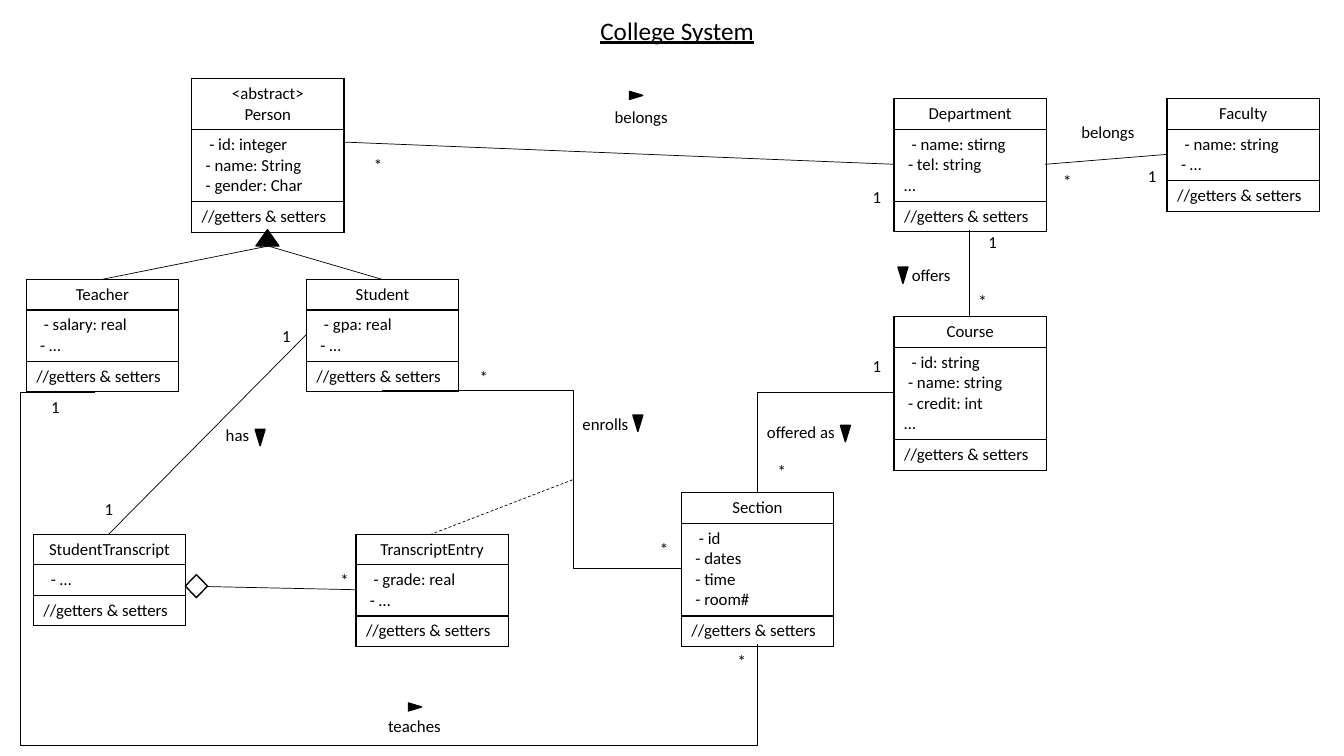
from lxml import etree
from pptx import Presentation
from pptx.dml.color import RGBColor
from pptx.enum.dml import MSO_LINE
from pptx.enum.shapes import MSO_CONNECTOR, MSO_SHAPE
from pptx.enum.text import MSO_AUTO_SIZE, PP_ALIGN
from pptx.oxml import parse_xml
from pptx.oxml.ns import nsdecls, qn
from pptx.util import Cm, Pt

STRAIGHT, ELBOW = MSO_CONNECTOR.STRAIGHT, MSO_CONNECTOR.ELBOW
TRIANGLE, DIAMOND = MSO_SHAPE.ISOSCELES_TRIANGLE, MSO_SHAPE.DIAMOND
CENTER, LEFT = PP_ALIGN.CENTER, PP_ALIGN.LEFT
DASH = MSO_LINE.DASH
FIT_SHAPE = MSO_AUTO_SIZE.SHAPE_TO_FIT_TEXT

BLACK, WHITE = "000000", "FFFFFF"
BODY = {"name": "Calibri", "size": Pt(12)}
TITLE = {"name": "Calibri", "size": Pt(18), "underline": True}
CLASS_WIDTH = 3.84
LINE_HEIGHT, ROW_PADDING = 0.52, 0.25
FIRST_INDENT, NEXT_INDENT = 0.19, 0.1
DOWN, RIGHT = (180, 0.25, 0.41), (90, 0.2, 0.33)

# Class name lines, left, top, attributes
CLASSES = [
    (["Student"], 7.72, 7.04, ["- gpa: real", "- …"]),
    (["Teacher"], 0.66, 7.04, ["- salary: real", "- …"]),
    (["<abstract>", "Person"], 4.83, 1.98,
     ["- id: integer", "- name: String", "- gender: Char"]),
    (["Faculty"], 29.41, 2.49, ["- name: string", "- …"]),
    (["Department"], 22.53, 2.49, ["- name: stirng", "- tel: string", "…"]),
    (["Course"], 22.53, 7.98,
     ["- id: string", "- name: string", "- credit: int", "…"]),
    (["Section"], 17.17, 12.42, ["- id", "- dates", "- time", "- room#"]),
    (["TranscriptEntry"], 8.97, 13.46, ["- grade: real", "- …"]),
    (["StudentTranscript"], 0.84, 13.46, ["- …"]),
]

# Start and end points
STRAIGHT_LINKS = [
    (9.63, 7.04, 6.76, 6.2), (6.76, 6.2, 2.57, 7.04),
    (29.41, 3.89, 26.34, 4.14), (8.66, 3.58, 22.53, 4.14),
    (5.21, 14.78, 8.97, 14.86), (24.43, 5.79, 24.43, 7.98),
    (7.72, 8.43, 2.74, 13.46),
]
ENTRY_LINK = (14.43, 12.09, 10.87, 13.46)

# Points, geometry, bend positions in thousandths of a percent
BENT_LINKS = [
    ((9.63, 9.83, 17.17, 14.33), "bentConnector3", [63800]),
    ((22.53, 9.88, 19.08, 12.42), "bentConnector2", []),
    ((2.39, 9.88, 19.08, 16.23), "bentConnector4", [-11200, 140100]),
]

# Text, left, top, width
LABELS = [
    ("belongs", 15.24, 2.57, 1.85), ("belongs", 27, 2.95, 1.85),
    ("enrolls", 14.43, 10.31, 1.68), ("offers", 22.73, 6.55, 1.5),
    ("offered as", 19.08, 10.49, 2.24), ("has", 5.44, 10.57, 1.12),
    ("teaches", 9.53, 17.91, 1.85),
]
POINTERS = [
    (DOWN, [(15.95, 10.46), (22.63, 6.73), (21.18, 10.72), (6.43, 10.82)]),
    (RIGHT, [(15.93, 2.24), (10.36, 17.65)]),
]
MULTIPLICITIES = {
    "1": [(21.74, 4.57), (24.66, 5.72), (21.74, 8.84), (6.86, 8.08),
          (2.39, 12.45), (1.04, 9.88), (28.68, 4.04)],
    "*": [(9.17, 3.78), (26.54, 4.19), (24.41, 7.21), (19.35, 11.48),
          (11.84, 9.12), (16.38, 13.46), (8.33, 14.22), (18.34, 16.28)],
}


def color(value):
    return RGBColor.from_string(value)


class Diagram:
    def __init__(self, slide, ink=BLACK):
        self.slide = slide
        self.ink = ink

    def add_run(self, paragraph, text, style=BODY, alignment=LEFT):
        paragraph.alignment = alignment
        run = paragraph.add_run()
        run.text = text
        for name, value in style.items():
            setattr(run.font, name, value)
        run.font.color.rgb = color(self.ink)

    def text(self, text, left, top, width, height=0.76, style=BODY):
        box = self.slide.shapes.add_textbox(Cm(left), Cm(top), Cm(width), Cm(height))
        box.text_frame.word_wrap = False
        box.text_frame.auto_size = FIT_SHAPE
        self.add_run(box.text_frame.paragraphs[0], text, style)

    def shape(self, kind, left, top, width, height, fill, rotation=0):
        shape = self.slide.shapes.add_shape(
            kind, Cm(left), Cm(top), Cm(width), Cm(height))
        shape.shadow.inherit = False
        shape.rotation = rotation
        shape.fill.solid()
        shape.fill.fore_color.rgb = color(fill)
        shape.line.color.rgb = color(self.ink)
        shape.line.width = Pt(1)

    def link(self, points, kind=STRAIGHT, dash=None):
        connector = self.slide.shapes.add_connector(kind, *map(Cm, points))
        connector.line.color.rgb = color(self.ink)
        connector.line.width = Pt(0.5)
        if dash:
            connector.line.dash_style = dash
        etree.SubElement(connector._element.spPr, qn("a:effectLst"))
        return connector

    def bent_link(self, points, geometry, bends):
        connector = self.link(points, ELBOW)
        preset = connector._element.spPr.find(qn("a:prstGeom"))
        preset.set("prst", geometry)
        guides = preset.find(qn("a:avLst"))
        for number, bend in enumerate(bends, 1):
            etree.SubElement(guides, qn("a:gd"), name=f"adj{number}",
                             fmla=f"val {bend}")

    def border(self, cell):
        properties = cell._tc.get_or_add_tcPr()
        for side in ("lnL", "lnR", "lnT", "lnB"):
            properties.append(parse_xml(
                f'<a:{side} {nsdecls("a")} w="{Pt(1)}"><a:solidFill>'
                f'<a:srgbClr val="{self.ink}"/></a:solidFill></a:{side}>'))

    def class_box(self, name, left, top, attributes):
        sections = [name, attributes, ["//getters & setters"]]
        heights = [ROW_PADDING + LINE_HEIGHT * len(lines) for lines in sections]
        table = self.slide.shapes.add_table(
            len(sections), 1, Cm(left), Cm(top), Cm(CLASS_WIDTH),
            Cm(sum(heights))).table
        table.first_row = table.horz_banding = False
        for index, lines in enumerate(sections):
            table.rows[index].height = Cm(heights[index])
            cell = table.cell(index, 0)
            self.border(cell)
            cell.fill.background()
            frame = cell.text_frame
            for number, line in enumerate(lines):
                paragraph = frame.add_paragraph() if number else frame.paragraphs[0]
                if line.startswith("-"):
                    indent = NEXT_INDENT if number else FIRST_INDENT
                    paragraph._p.get_or_add_pPr().set("marL", str(Cm(indent)))
                self.add_run(paragraph, line, alignment=LEFT if index else CENTER)


def main():
    presentation = Presentation()
    presentation.slide_width, presentation.slide_height = Cm(33.87), Cm(19.05)
    diagram = Diagram(presentation.slides.add_slide(presentation.slide_layouts[6]))

    # Title and classes
    diagram.text("College System", 14.88, 0.25, 4.42, 1.02, TITLE)
    for class_data in CLASSES:
        diagram.class_box(*class_data)

    # Relations
    for points in STRAIGHT_LINKS:
        diagram.link(points)
    diagram.link(ENTRY_LINK, dash=DASH)
    for bent in BENT_LINKS:
        diagram.bent_link(*bent)

    # Inheritance and aggregation ends
    diagram.shape(TRIANGLE, 6.45, 5.79, 0.58, 0.41, BLACK)
    diagram.shape(DIAMOND, 4.67, 14.48, 0.56, 0.58, WHITE)

    # Relation names, reading directions and multiplicities
    for label in LABELS:
        diagram.text(*label)
    for (rotation, width, height), places in POINTERS:
        for left, top in places:
            diagram.shape(TRIANGLE, left, top, width, height, BLACK, rotation)
    for text, places in MULTIPLICITIES.items():
        for left, top in places:
            diagram.text(text, left, top, 0.74)

    presentation.save("out.pptx")


if __name__ == "__main__":
    main()
